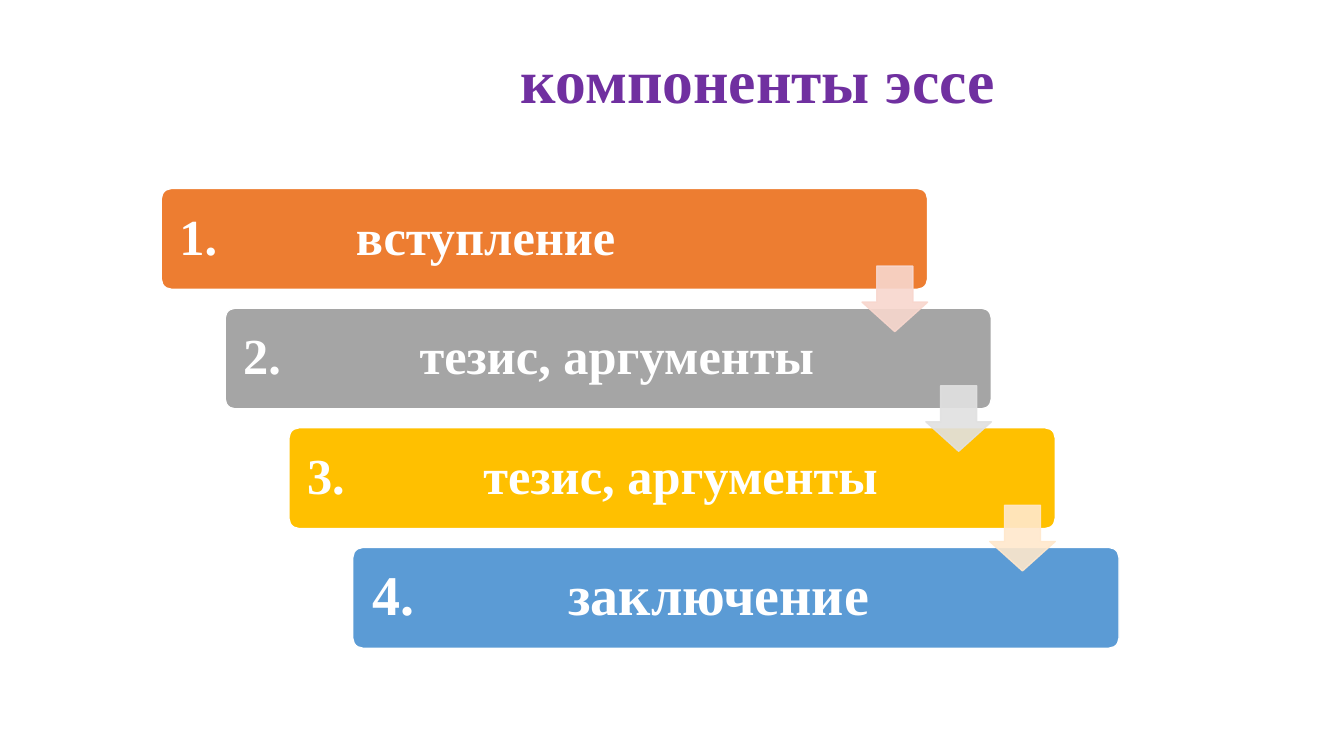
"""Build a slide with the four stepped components of an essay."""
from lxml.etree import SubElement
from pptx import Presentation
from pptx.dml.color import RGBColor
from pptx.enum.shapes import MSO_SHAPE
from pptx.enum.text import MSO_ANCHOR, PP_ALIGN
from pptx.oxml.ns import qn
from pptx.util import Inches, Pt

WHITE = RGBColor(0xFF, 0xFF, 0xFF)
PURPLE = RGBColor(0x70, 0x30, 0xA0)
ORANGE = RGBColor(0xED, 0x7D, 0x31)
GRAY = RGBColor(0xA5, 0xA5, 0xA5)
GOLD = RGBColor(0xFF, 0xC0, 0x00)
BLUE = RGBColor(0x5B, 0x9B, 0xD5)
PALE_ORANGE = RGBColor(0xF8, 0xD7, 0xCE)
PALE_GRAY = RGBColor(0xE1, 0xE1, 0xE1)
PALE_GOLD = RGBColor(0xFF, 0xE8, 0xCC)

LEFT, TOP = 1.6, 1.87
STEP_X, STEP_Y = 0.633, 1.187
BAR_W, BAR_H = 7.6, 1
ARROW, ARROW_DROP = 0.65, 0.77

STEPS = [
    ("вступление", ORANGE, 36, 0.15, 1.75),
    ("тезис, аргументы", GRAY, 36, 0.15, 1.75),
    ("тезис, аргументы", GOLD, 36, 0.15, 1.75),
    ("заключение", BLUE, 40, 0.17, 1.94),
]


def add_block(kind, x, y, w, h, adjustments, fill, line):
    sp = s.shapes.add_shape(kind, Inches(x), Inches(y), Inches(w), Inches(h))
    sp.shadow.inherit = False
    for i, value in enumerate(adjustments):
        sp.adjustments[i] = value
    sp.fill.solid()
    sp.fill.fore_color.rgb = fill
    sp.line.color.rgb = line
    sp.line.width = Pt(1)
    return sp


def format_text(p, size, color, align):
    p.alignment = align
    p.line_spacing = 0.9
    font = {"name": "Times New Roman", "size": Pt(size), "bold": True}
    for r in p.runs:
        for key, value in font.items():
            setattr(r.font, key, value)
        r.font.color.rgb = color


prs = Presentation()
prs.slide_width, prs.slide_height = Inches(13.33), Inches(7.5)
s = prs.slides.add_slide(prs.slide_layouts[5])

title = s.shapes.title
place = {"left": 2.62, "top": 0.4, "width": 9.8, "height": 0.85}
for key, value in place.items():
    setattr(title, key, Inches(value))
tf = title.text_frame
tf.text = "компоненты эссе"
tf.vertical_anchor = MSO_ANCHOR.MIDDLE
format_text(tf.paragraphs[0], 44, PURPLE, PP_ALIGN.CENTER)

for row, (label, color, size, inset, tab) in enumerate(STEPS):
    sp = add_block(MSO_SHAPE.ROUNDED_RECTANGLE, LEFT + row * STEP_X,
                   TOP + row * STEP_Y, BAR_W, BAR_H, [0.1], color, WHITE)
    tf = sp.text_frame
    tf.word_wrap = True
    tf.vertical_anchor = MSO_ANCHOR.MIDDLE
    for side in ("left", "top", "right", "bottom"):
        setattr(tf, f"margin_{side}", Inches(inset))
    p = tf.paragraphs[0]
    p.text = f"{row + 1}.\t{label}"
    tabs = SubElement(p._p.get_or_add_pPr(), qn("a:tabLst"))
    SubElement(tabs, qn("a:tab"), pos=str(Inches(tab)), algn="l")
    format_text(p, size, WHITE, PP_ALIGN.LEFT)

for row, color in enumerate([PALE_ORANGE, PALE_GRAY, PALE_GOLD]):
    sp = add_block(MSO_SHAPE.DOWN_ARROW, LEFT + row * STEP_X + BAR_W - ARROW,
                   TOP + row * STEP_Y + ARROW_DROP, ARROW, ARROW,
                   [0.55, 0.45], color, color)
    for clr in sp._element.spPr.iter(qn("a:srgbClr")):
        SubElement(clr, qn("a:alpha"), val="90000")

prs.save("out.pptx")
